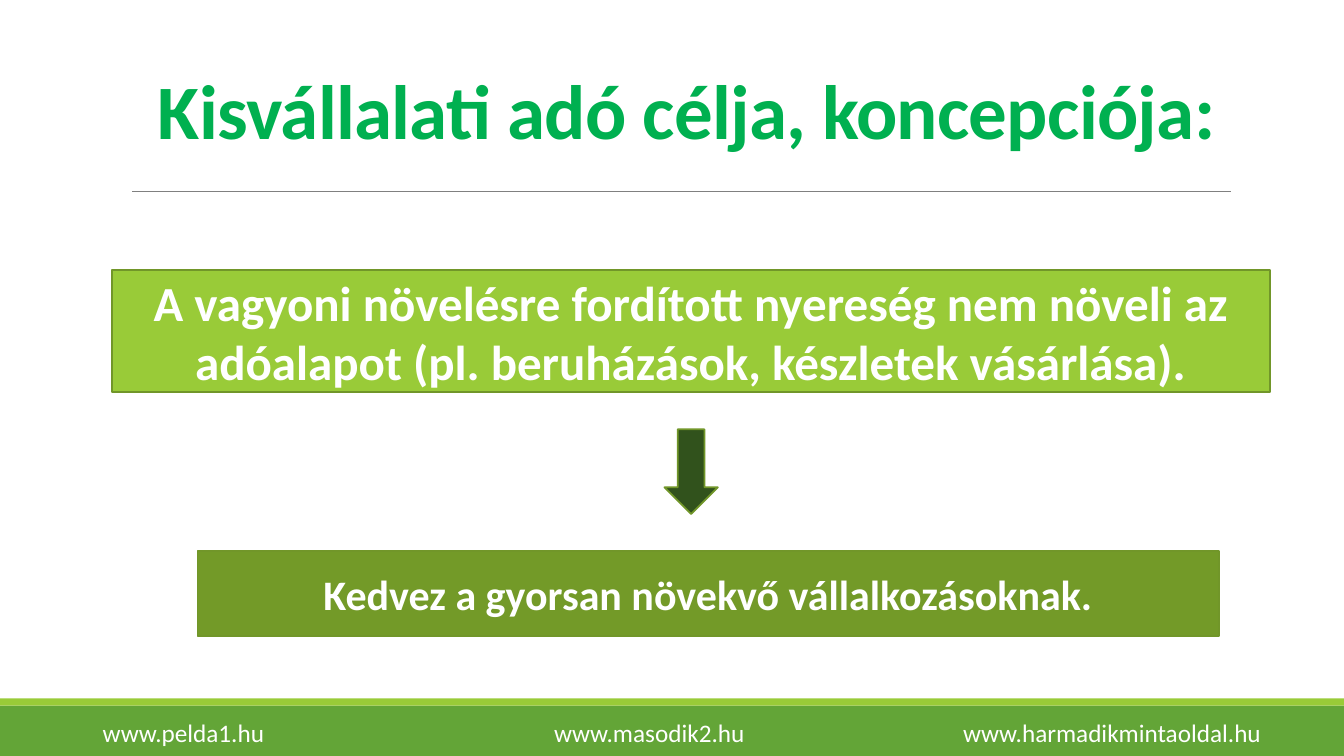
from pptx import Presentation
from pptx.dml.color import RGBColor
from pptx.enum.shapes import MSO_CONNECTOR, MSO_SHAPE
from pptx.enum.text import MSO_ANCHOR, PP_ALIGN
from pptx.oxml.ns import qn
from pptx.util import Inches, Pt
from lxml import etree

RECT = MSO_SHAPE.RECTANGLE
DOWN_ARROW = MSO_SHAPE.DOWN_ARROW
STRAIGHT = MSO_CONNECTOR.STRAIGHT
MIDDLE = MSO_ANCHOR.MIDDLE
CENTER = PP_ALIGN.CENTER

SLIDE_W, SLIDE_H = 13.33, 7.5
LIME, GREEN, OLIVE, FOREST = "99CB38", "63A537", "739A28", "31521C"
BORDER, TITLE_GREEN, GREY, WHITE = "719629", "00B050", "808080", "FFFFFF"


def color(hex_value):
    return RGBColor.from_string(hex_value)


def add_block(slide, kind, box, fill, border=None):
    block = slide.shapes.add_shape(kind, *map(Inches, box))
    block.shadow.inherit = False
    block.fill.solid()
    block.fill.fore_color.rgb = color(fill)
    if border:
        block.line.color.rgb = color(border)
        block.line.width = Pt(1.25)
    else:
        block.line.fill.background()
    return block


def write(holder, text, size, hex_value, bold=True):
    frame = holder.text_frame
    frame.text = text
    frame.word_wrap = True
    frame.vertical_anchor = MIDDLE
    paragraph = frame.paragraphs[0]
    paragraph.alignment = CENTER
    run = paragraph.runs[0]
    run.font.name = "Calibri"
    run.font.size = Pt(size)
    run.font.bold = bold
    run.font.color.rgb = color(hex_value)
    return paragraph


def add_heading(slide, box):
    left, top, width, height = box
    heading = slide.shapes.add_textbox(*map(Inches, box))
    paragraph = write(heading, "Kisvállalati adó célja, koncepciója:", 55, TITLE_GREEN)
    paragraph.line_spacing = 0.85
    paragraph.runs[0].font._element.set("spc", "-50")

    rule_left, rule_y = left + 0.57, top + 1.54
    rule = slide.shapes.add_connector(
        STRAIGHT, Inches(rule_left), Inches(rule_y), Inches(rule_left + 10.9), Inches(rule_y)
    )
    rule.line.color.rgb = color(GREY)
    rule.line.width = Pt(0.5)
    etree.SubElement(rule._element.spPr, qn("a:effectLst"))


def add_concept(slide, box):
    left, top, width, height = box
    purpose = add_block(slide, RECT, (left, top, width, 1.21), LIME, BORDER)
    write(
        purpose,
        "A vagyoni növelésre fordított nyereség nem növeli az "
        "adóalapot (pl. beruházások, készletek vásárlása).",
        35,
        WHITE,
    )
    benefit_h = 0.84
    benefit = add_block(
        slide, RECT, (left + 0.85, top + height - benefit_h, 10.13, benefit_h), OLIVE, BORDER
    )
    write(benefit, "Kedvez a gyorsan növekvő vállalkozásoknak.", 30, WHITE)
    arrow_w = 0.53
    add_block(
        slide,
        DOWN_ARROW,
        (left + (width - arrow_w) / 2, top + 1.58, arrow_w, 0.84),
        FOREST,
        BORDER,
    )


def add_footer(slide, box):
    left, top, width, height = box
    stripe_h = 0.07
    add_block(slide, RECT, (left, top + stripe_h, width, height - stripe_h), GREEN)
    add_block(slide, RECT, (left, top, width, stripe_h), LIME)
    site_w = 3.6
    sites = [
        ("www.pelda1.hu", 1.82),
        ("www.masodik2.hu", 6.44),
        ("www.harmadikmintaoldal.hu", 11.03),
    ]
    for address, center in sites:
        site = slide.shapes.add_textbox(
            Inches(left + center - site_w / 2), Inches(top + 0.11), Inches(site_w), Inches(0.46)
        )
        write(site, address, 18, WHITE, bold=False)


def main():
    deck = Presentation()
    deck.slide_width = Inches(SLIDE_W)
    deck.slide_height = Inches(SLIDE_H)
    slide = deck.slides.add_slide(deck.slide_layouts[6])
    add_footer(slide, (0, 6.93, SLIDE_W, 0.57))
    add_heading(slide, (0.74, 0.36, 12.14, 1.59))
    add_concept(slide, (1.11, 2.68, 11.49, 3.63))
    deck.save("out.pptx")


if __name__ == "__main__":
    main()
